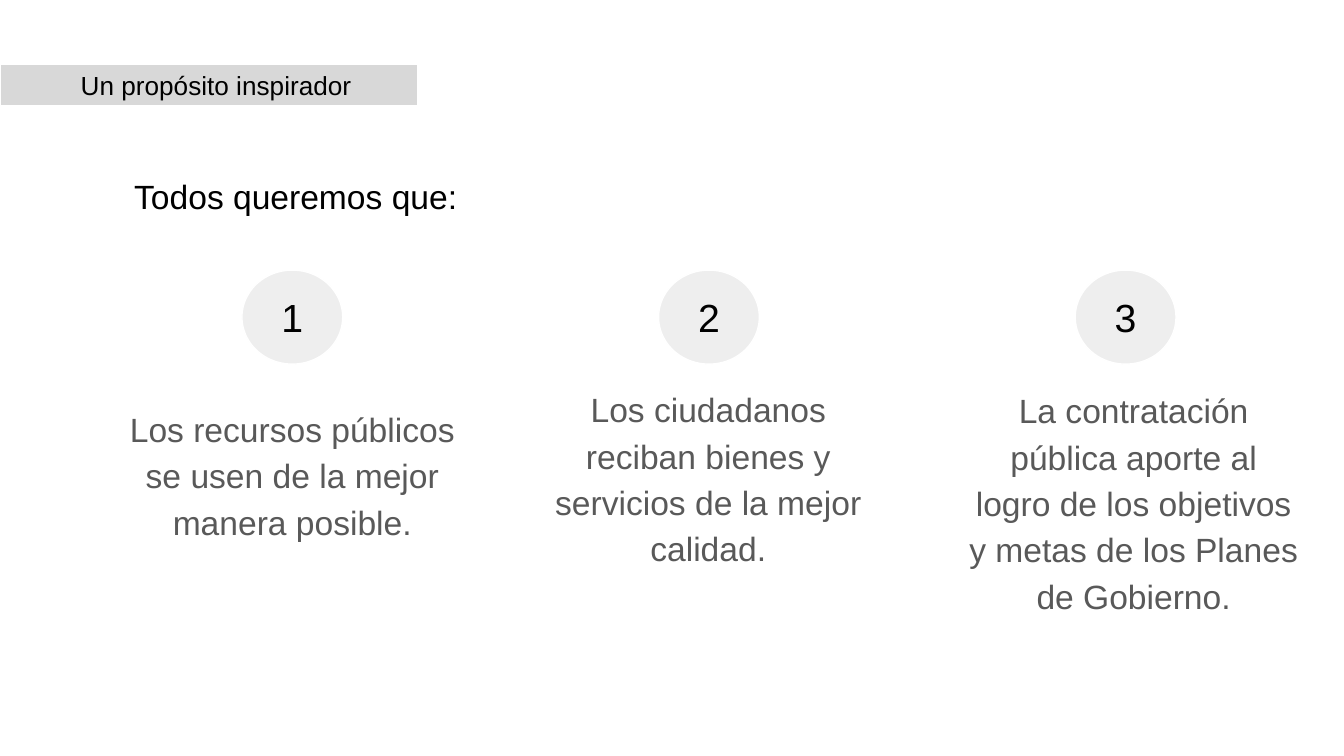
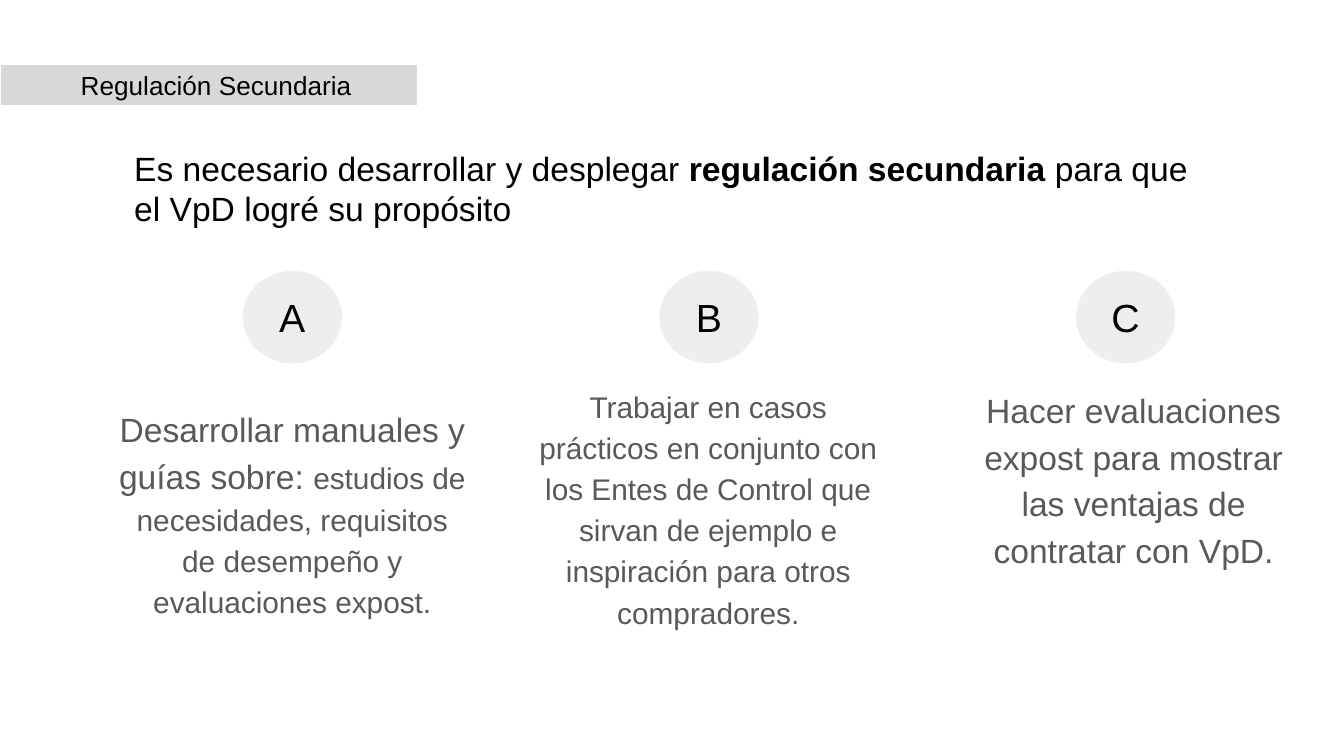
from pptx import Presentation
from pptx.dml.color import RGBColor
from pptx.enum.shapes import MSO_SHAPE
from pptx.enum.text import MSO_ANCHOR, PP_ALIGN
from pptx.util import Inches, Pt

RECT, OVAL = MSO_SHAPE.RECTANGLE, MSO_SHAPE.OVAL
TOP, MIDDLE = MSO_ANCHOR.TOP, MSO_ANCHOR.MIDDLE
LEFT, CENTER = PP_ALIGN.LEFT, PP_ALIGN.CENTER

# Content: a run is (text, size, bold);
# a column is (label, box height, anchor, top inset, runs)
SLIDES = [
    {
        "title": "Un propósito inspirador",
        "lead": [("Todos queremos que:", 18, False)],
        "lead_box": (0.9, 1.21, 8.21, 0.5),
        "columns": [
            ("1", 3.5, MIDDLE, 0.17,
             [("Los recursos públicos se usen de la mejor manera posible.", 18, False)]),
            ("2", 2.25, TOP, 0.7,
             [("Los ciudadanos reciban bienes y servicios de la mejor calidad.", 18, False)]),
            ("3", 2.64, TOP, 0.75,
             [("La contratación pública aporte al logro de los objetivos y metas "
               "de los Planes de Gobierno.", 18, False)]),
        ],
    },
    {
        "title": "Regulación Secundaria",
        "lead": [("Es necesario desarrollar y desplegar ", 18, False),
                 ("regulación secundaria ", 18, True),
                 ("para que el VpD logré su propósito", 18, False)],
        "lead_box": (0.9, 1, 8.21, 0.81),
        "columns": [
            ("A", 3.5, TOP, 1.27,
             [("Desarrollar manuales y guías sobre: ", 18, False),
              ("estudios de necesidades, requisitos de desempeño y "
               "evaluaciones expost.", 16, False)]),
            ("B", 2.71, TOP, 0.7,
             [("Trabajar en casos prácticos en conjunto con los Entes de Control "
               "que sirvan de ejemplo e inspiración para otros compradores.", 16, False)]),
            ("C", 2.29, TOP, 0.75,
             [("Hacer evaluaciones expost para mostrar las ventajas de "
               "contratar con VpD.", 18, False)]),
        ],
    },
]

# Shared style and layout, in inches
FONT = "Arial"
BLACK, GREY, WHITE, BAND, DISC = "000000", "595959", "FFFFFF", "D8D8D8", "EEEEEE"
PAD = 0.1
TITLE_BOX = (0, 0.48, 3.11, 0.31)
COLUMN_BOXES = [(0.78, 1.73, 2.79), (3.91, 2.15, 2.72), (7.11, 2.11, 2.65)]
DISC_LEFT, DISC_STEP, DISC_TOP, DISC_SIZE = 1.8, 3.1, 2.01, (0.75, 0.7)


def rgb(color):
    return RGBColor.from_string(color)


def write(sp, runs, color=BLACK, align=LEFT, anchor=TOP, spacing=1.0, left=PAD, top=PAD):
    tf = sp.text_frame
    frame = {"word_wrap": True, "vertical_anchor": anchor,
             "margin_left": Inches(left), "margin_top": Inches(top),
             "margin_right": Inches(PAD), "margin_bottom": Inches(PAD)}
    for name, value in frame.items():
        setattr(tf, name, value)
    p = tf.paragraphs[0]
    p.alignment, p.line_spacing = align, spacing
    for text, size, bold in runs:
        r = p.add_run()
        r.text = text
        for name, value in {"name": FONT, "size": Pt(size), "bold": bold}.items():
            setattr(r.font, name, value)
        r.font.color.rgb = rgb(color)


def add_text(s, box, runs, **style):
    write(s.shapes.add_textbox(*map(Inches, box)), runs, **style)


def add_filled(s, kind, box, fill, runs, **style):
    sp = s.shapes.add_shape(kind, *map(Inches, box))
    sp.shadow.inherit = False
    sp.fill.solid()
    sp.fill.fore_color.rgb = rgb(fill)
    sp.line.color.rgb = rgb(WHITE)
    sp.line.width = Pt(0.75)
    write(sp, runs, anchor=MIDDLE, **style)


def build(prs, content):
    s = prs.slides.add_slide(prs.slide_layouts[6])
    # Title band and lead sentence
    add_filled(s, RECT, TITLE_BOX, BAND, [(content["title"], 14, False)], left=0.6)
    add_text(s, content["lead_box"], content["lead"])
    # Three columns: text under a labelled disc
    for i, (label, height, anchor, inset, runs) in enumerate(content["columns"]):
        add_text(s, (*COLUMN_BOXES[i], height), runs, color=GREY, align=CENTER,
                 anchor=anchor, spacing=1.15, top=inset)
        add_filled(s, OVAL, (DISC_LEFT + i * DISC_STEP, DISC_TOP, *DISC_SIZE), DISC,
                   [(label, 21, False)], align=CENTER)


def main():
    prs = Presentation()
    # Widescreen, 16:9
    prs.slide_width = Inches(10)
    prs.slide_height = prs.slide_width * 9 // 16
    for content in SLIDES:
        build(prs, content)
    prs.save("out.pptx")


if __name__ == "__main__":
    main()
